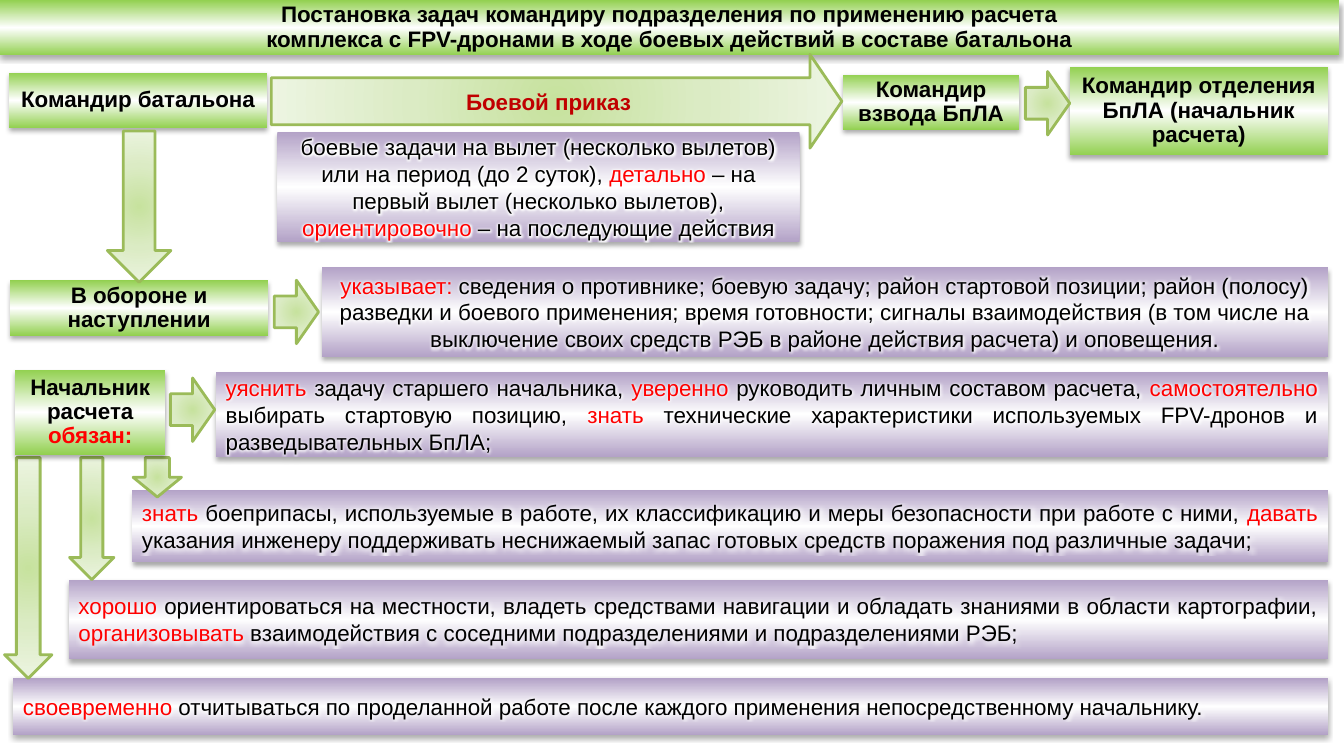
import pptx
import pptx.util
import pptx.dml.color
import pptx.enum.shapes
import pptx.enum.text
import pptx.oxml
import pptx.oxml.ns

Inches = pptx.util.Inches
ALIGN = pptx.enum.text.PP_ALIGN
SHAPES = pptx.enum.shapes.MSO_SHAPE

COLOURS = {
    "green": "92D050", "purple": "B3A2C7", "white": "FFFFFF", "black": "000000",
    "red": "FF0000", "order": "C00000", "arrow line": "9BBB59",
    "arrow inner": "C7E29E", "arrow middle": "DBEBC4", "arrow outer": "EDF5E2",
}
RIGHT_EDGE = 13.17

# Words between asterisks are red. Frames are left, top, width, height.
ROLES = [
    ((0, 0, 13.28, 0.55), ["Постановка задач командиру подразделения по применению расчета",
                           "комплекса с FPV-дронами в ходе боевых действий в составе батальона"]),
    ((0.09, 0.72, 2.56, 0.55), ["Командир батальона"]),
    ((8.36, 0.74, 1.75, 0.55), ["Командир взвода БпЛА"]),
    ((10.61, 0.66, 2.56, 0.88), ["Командир отделения БпЛА (начальник расчета)"]),
    ((0.1, 2.78, 2.56, 0.55), ["В обороне и наступлении"]),
]
CREW_CHIEF = ((0.15, 3.67, 1.49, 0.84), ["Начальник расчета *обязан:*"])

ORDER_DETAILS = (
    (2.75, 1.31, 5.18, 1.09),
    "боевые задачи на вылет (несколько вылетов) или на период (до 2 суток), *детально* – на "
    "первый вылет (несколько вылетов), *ориентировочно* – на последующие действия")
# Left, top, height, alignment, text; each box reaches the right edge.
DUTIES = [
    (3.19, 2.65, 0.89, ALIGN.CENTER,
     "*указывает:* сведения о противнике; боевую задачу; район стартовой позиции; район (полосу) "
     "разведки и боевого применения; время готовности; сигналы взаимодействия (в том числе на "
     "выключение своих средств РЭБ в районе действия расчета) и оповещения."),
    (2.14, 3.69, 0.84, ALIGN.JUSTIFY,
     "*уяснить* задачу старшего начальника, *уверенно* руководить личным составом расчета, "
     "*самостоятельно* выбирать стартовую позицию, *знать* технические характеристики "
     "используемых FPV-дронов и разведывательных БпЛА;"),
    (1.31, 4.86, 0.72, ALIGN.JUSTIFY,
     "*знать* боеприпасы, используемые в работе, их классификацию и меры безопасности при работе "
     "с ними, *давать* указания инженеру поддерживать неснижаемый запас готовых средств "
     "поражения под различные задачи;"),
    (0.68, 5.75, 0.79, ALIGN.JUSTIFY,
     "*хорошо* ориентироваться на местности, владеть средствами навигации и обладать знаниями в "
     "области картографии, *организовывать* взаимодействия с соседними подразделениями и "
     "подразделениями РЭБ;"),
    (0.13, 6.73, 0.56, ALIGN.JUSTIFY,
     "*своевременно* отчитываться по проделанной работе после каждого применения "
     "непосредственному начальнику."),
]

ORDER_ARROW = ((2.69, 0.54, 5.66, 0.93), "Боевой приказ")
RIGHT_ARROWS = [(10.17, 0.71), (2.72, 2.78), (1.69, 3.75)]
RIGHT_ARROW_SIZE = (0.44, 0.63)
# Centre x, top, length, thickness
DOWN_ARROWS = [(1.38, 1.3, 1.5, 0.63), (0.28, 4.54, 2.19, 0.47),
               (1.56, 4.54, 0.39, 0.48), (0.91, 4.54, 1.21, 0.44)]


def rgb(name):
    return pptx.dml.color.RGBColor.from_string(COLOURS[name])


def xml(tag, inner, attributes=""):
    return pptx.oxml.parse_xml(
        f'<a:{tag} {pptx.oxml.ns.nsdecls("a")} {attributes}>{inner}</a:{tag}>')


def set_gradient(shape, names, direction):
    """Fill with evenly spaced stops; direction is the XML that follows the stop list."""
    stops = "".join(
        f'<a:gs pos="{i * 100000 // (len(names) - 1)}"><a:srgbClr val="{COLOURS[name]}"/></a:gs>'
        for i, name in enumerate(names))
    shape.fill.background()
    properties = shape._element.spPr
    no_fill = properties.find(pptx.oxml.ns.qn("a:noFill"))
    properties.replace(no_fill, xml("gradFill", f"<a:gsLst>{stops}</a:gsLst>{direction}",
                                    'rotWithShape="1"'))


def add_glow(run):
    glow = (f'<a:glow rad="{pptx.util.Pt(5)}"><a:srgbClr val="{COLOURS["white"]}"/></a:glow>')
    colour = run.font._element.find(pptx.oxml.ns.qn("a:solidFill"))
    colour.addnext(xml("effectLst", glow))


def write(shape, lines, align, bold, spacing=1.0, colour="black", glow=False):
    frame = shape.text_frame
    frame.word_wrap = True
    frame.vertical_anchor = pptx.enum.text.MSO_ANCHOR.MIDDLE
    font_format = {"name": "Arial", "size": pptx.util.Pt(16), "bold": bold}
    for number, line in enumerate(lines):
        paragraph = frame.add_paragraph() if number else frame.paragraphs[0]
        paragraph.alignment = align
        paragraph.line_spacing = spacing
        for i, part in enumerate(line.split("*")):
            if not part:
                continue
            run = paragraph.add_run()
            run.text = part
            for key, value in font_format.items():
                setattr(run.font, key, value)
            run.font.color.rgb = rgb("red" if i % 2 else colour)
            if glow:
                add_glow(run)


def add_box(slide, frame, edge_colour):
    box = slide.shapes.add_shape(SHAPES.RECTANGLE, *map(Inches, frame))
    set_gradient(box, [edge_colour, "white", edge_colour], '<a:lin ang="5400000" scaled="0"/>')
    box.line.fill.background()
    box.shadow.inherit = False
    shadow = xml("outerShdw", f'<a:srgbClr val="{COLOURS["black"]}"><a:alpha val="32000"/></a:srgbClr>',
                 'blurRad="44450" dist="27940" dir="5400000" rotWithShape="0"')
    box._element.spPr.find(pptx.oxml.ns.qn("a:effectLst")).append(shadow)
    return box


def add_role(slide, frame, lines):
    write(add_box(slide, frame, "green"), lines, ALIGN.CENTER, True, spacing=0.9)


def add_duty(slide, frame, text, align):
    write(add_box(slide, frame, "purple"), [text], align, False, glow=True)


def add_arrow(slide, frame):
    arrow = slide.shapes.add_shape(SHAPES.RIGHT_ARROW, *map(Inches, frame))
    set_gradient(arrow, ["arrow inner", "arrow middle", "arrow outer"],
                 '<a:path path="circle"><a:fillToRect l="50000" t="50000" r="50000" b="50000"/></a:path>')
    arrow.line.color.rgb = rgb("arrow line")
    arrow.line.width = pptx.util.Pt(2)
    arrow.shadow.inherit = False
    return arrow


def main():
    deck = pptx.Presentation()
    deck.slide_width, deck.slide_height = Inches(13.33), Inches(7.5)
    slide = deck.slides.add_slide(deck.slide_layouts[6])

    for frame, lines in ROLES:
        add_role(slide, frame, lines)
    add_duty(slide, *ORDER_DETAILS, ALIGN.CENTER)
    for left, top, height, align, text in DUTIES:
        add_duty(slide, (left, top, RIGHT_EDGE - left, height), text, align)

    order_frame, order_text = ORDER_ARROW
    order = add_arrow(slide, order_frame)
    order.adjustments[1] = 0.34
    write(order, [order_text], ALIGN.CENTER, True, colour="order")
    for corner in RIGHT_ARROWS:
        add_arrow(slide, corner + RIGHT_ARROW_SIZE)
    for centre, top, length, thickness in DOWN_ARROWS:
        frame = (centre - length / 2, top + (length - thickness) / 2, length, thickness)
        add_arrow(slide, frame).rotation = 90
    add_role(slide, *CREW_CHIEF)

    deck.save("out.pptx")


if __name__ == "__main__":
    main()
